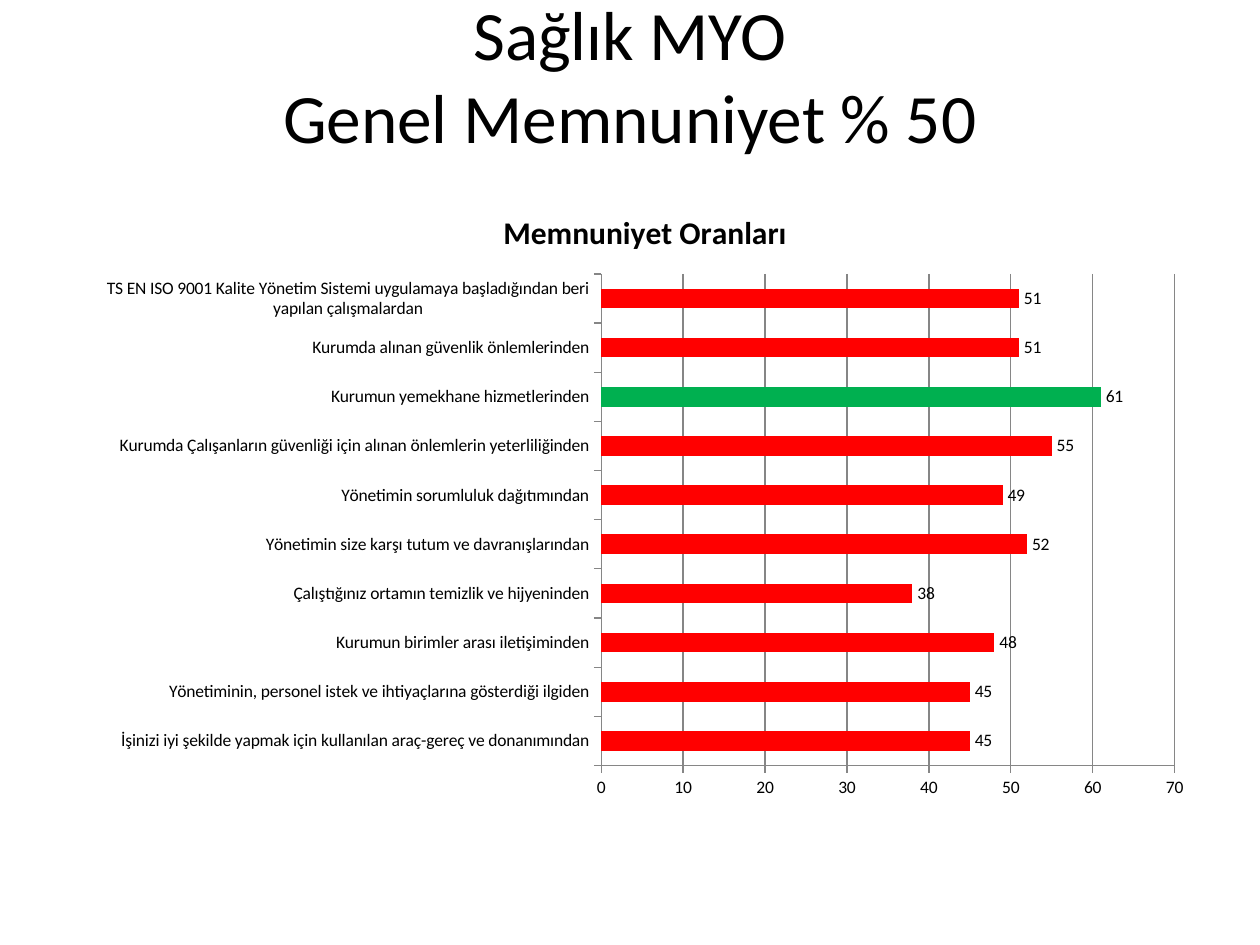
"""Build the slide of satisfaction rates as a titled bar chart."""
import dataclasses

import pptx
import pptx.chart.data
import pptx.dml.color
import pptx.enum.chart
import pptx.enum.text
import pptx.util


@dataclasses.dataclass(frozen=True)
class Theme:
    font: str = "Calibri"
    ink: str = "000000"
    grid: str = "868686"
    low: str = "FF0000"
    high: str = "00B050"
    head: float = 39.6
    title: float = 18
    label: float = 10
    line: float = 0.75


@dataclasses.dataclass(frozen=True)
class Box:
    left: float
    top: float
    width: float
    height: float


@dataclasses.dataclass(frozen=True)
class Rate:
    name: str
    value: int


THEME = Theme()
WIDE, HIGH = pptx.util.Inches(10), pptx.util.Inches(7.5)
HEAD = Box(0.05, 0.04, 0.9, 0.1667)
PLOT = Box(0.067, 0.196, 0.89, 0.6613)
GOAL = 60
NAME = "Memnuniyet Oranları"
RATES = [
    Rate("İşinizi iyi şekilde yapmak için kullanılan araç-gereç ve donanımından", 45),
    Rate("Yönetiminin, personel istek ve ihtiyaçlarına gösterdiği ilgiden", 45),
    Rate("Kurumun birimler arası iletişiminden", 48),
    Rate("Çalıştığınız ortamın temizlik ve hijyeninden", 38),
    Rate("Yönetimin size karşı tutum ve davranışlarından", 52),
    Rate("Yönetimin sorumluluk dağıtımından", 49),
    Rate("Kurumda Çalışanların güvenliği için alınan önlemlerin yeterliliğinden", 55),
    Rate("Kurumun yemekhane hizmetlerinden", 61),
    Rate("Kurumda alınan güvenlik önlemlerinden", 51),
    Rate("TS EN ISO 9001 Kalite Yönetim Sistemi uygulamaya başladığından beri "
         "yapılan çalışmalardan", 51),
]


def place(box: Box) -> tuple[int, ...]:
    return (int(box.left * WIDE), int(box.top * HIGH),
            int(box.width * WIDE), int(box.height * HIGH))


def color(code: str) -> pptx.dml.color.RGBColor:
    return pptx.dml.color.RGBColor.from_string(code)


def style(font, size: float, bold: bool = False) -> None:
    font.name, font.size, font.bold = THEME.font, pptx.util.Pt(size), bold
    font.color.rgb = color(THEME.ink)


def fill(form, code: str) -> None:
    form.fill.solid()
    form.fill.fore_color.rgb = color(code)


def rule(line) -> None:
    line.color.rgb = color(THEME.grid)
    line.width = pptx.util.Pt(THEME.line)


def draw_head(slide, text: str) -> None:
    head = slide.shapes.title
    head.left, head.top, head.width, head.height = place(HEAD)
    frame = head.text_frame
    frame.text = text
    frame.word_wrap = True
    frame.auto_size = pptx.enum.text.MSO_AUTO_SIZE.NONE
    frame.vertical_anchor = pptx.enum.text.MSO_ANCHOR.MIDDLE
    frame.margin_bottom = pptx.util.Inches(0.72)
    for line in frame.paragraphs:
        line.alignment = pptx.enum.text.PP_ALIGN.CENTER
        line.space_before = pptx.util.Pt(0)
        for run in line.runs:
            style(run.font, THEME.head)


def draw_chart(slide, rates: list[Rate]) -> None:
    data = pptx.chart.data.CategoryChartData()
    data.categories = [rate.name for rate in rates]
    data.add_series(NAME, [rate.value for rate in rates])
    kind = pptx.enum.chart.XL_CHART_TYPE.BAR_CLUSTERED
    chart = slide.shapes.add_chart(kind, *place(PLOT), data).chart
    style(chart.font, THEME.label)
    chart.has_legend = False
    chart.has_title = True
    frame = chart.chart_title.text_frame
    frame.text = NAME
    style(frame.paragraphs[0].runs[0].font, THEME.title, True)

    for axis in (chart.category_axis, chart.value_axis):
        axis.major_tick_mark = pptx.enum.chart.XL_TICK_MARK.OUTSIDE
        axis.minor_tick_mark = pptx.enum.chart.XL_TICK_MARK.NONE
        rule(axis.format.line)
    scale = chart.value_axis
    scale.minimum_scale, scale.maximum_scale, scale.major_unit = 0, 70, 10
    scale.has_major_gridlines = True
    rule(scale.major_gridlines.format.line)

    plot = chart.plots[0]
    plot.gap_width = 150
    plot.vary_by_categories = False
    bars = plot.series[0]
    fill(bars.format, THEME.low)
    for spot, rate in enumerate(rates):
        if rate.value > GOAL:
            fill(bars.points[spot].format, THEME.high)
    tags = bars.data_labels
    tags.show_value = True
    tags.position = pptx.enum.chart.XL_LABEL_POSITION.OUTSIDE_END
    style(tags.font, THEME.label)


def main() -> None:
    deck = pptx.Presentation()
    deck.slide_width, deck.slide_height = WIDE, HIGH
    slide = deck.slides.add_slide(deck.slide_layouts[5])
    draw_head(slide, "Sağlık MYO\vGenel Memnuniyet % 50")
    draw_chart(slide, RATES)
    deck.save("out.pptx")


if __name__ == "__main__":
    main()
